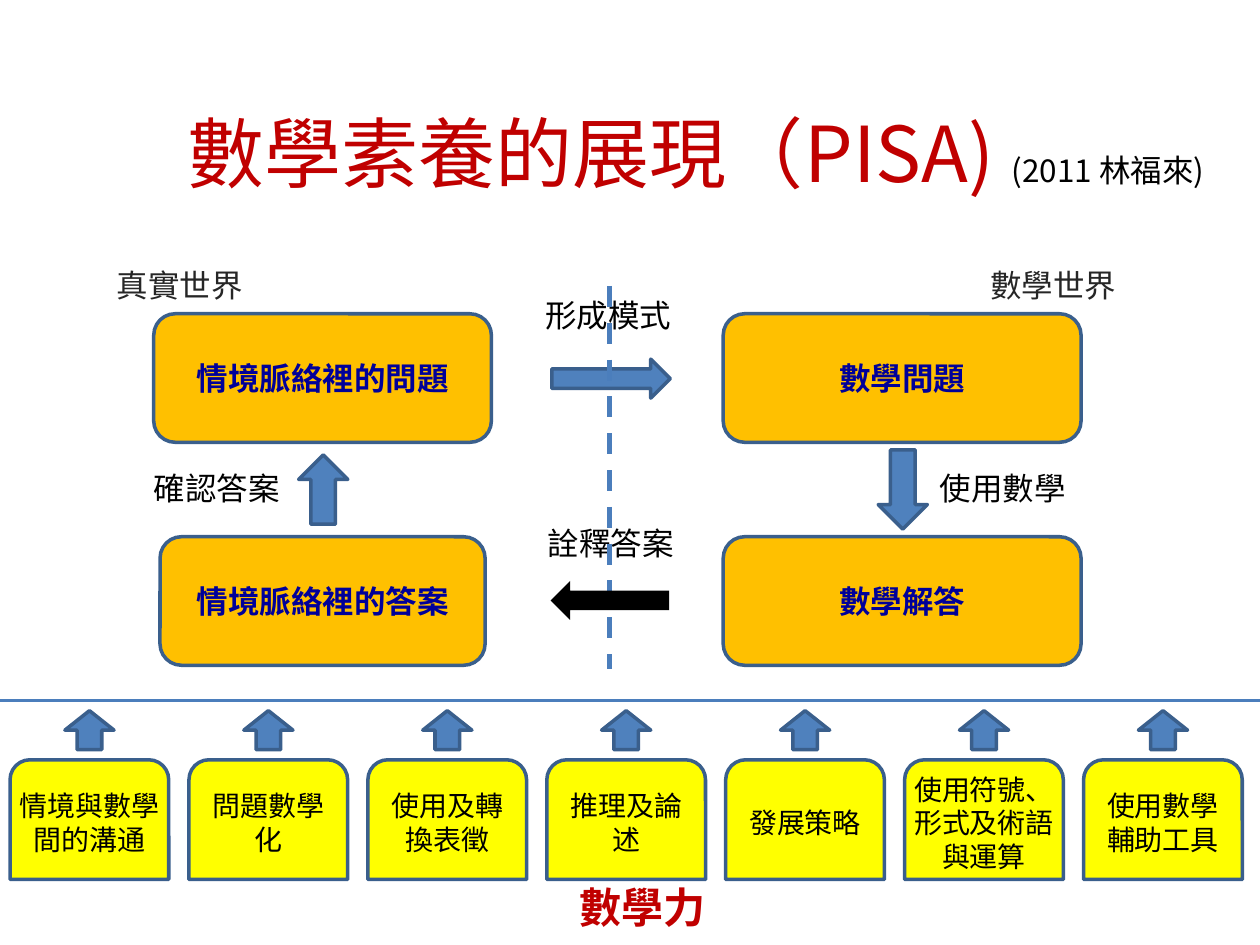
import pptx
import pptx.dml.color
import pptx.enum.dml
import pptx.enum.shapes
import pptx.enum.text
import pptx.oxml
import pptx.oxml.ns
import pptx.util
from dataclasses import dataclass

Inches = pptx.util.Inches
Pt = pptx.util.Pt
SHAPES = pptx.enum.shapes.MSO_SHAPE
ALIGN = pptx.enum.text.PP_ALIGN
ANCHOR = pptx.enum.text.MSO_ANCHOR


@dataclass(frozen=True)
class Theme:
    body_font: str = "Calibri"
    title_font: str = "Noto Sans CJK SC"
    title_size: int = 44
    force_size: int = 24
    body_size: int = 18
    ability_size: int = 16
    red: str = "C00000"
    black: str = "000000"
    gray: str = "262626"
    navy: str = "000099"
    orange: str = "FFC000"
    yellow: str = "FFFF00"
    blue: str = "4F81BD"
    outline: str = "3A5F8C"
    rule: str = "4B7EBC"


THEME = Theme()

TITLE = ("數學素養的展現（PISA) ", "(2011 林福來)")
FORCE = "數學力"
LABELS = [
    ("真實世界", 0.83, 2.06, 1.64, THEME.gray, ALIGN.LEFT),
    ("數學世界", 7.76, 2.06, 1.97, THEME.gray, ALIGN.LEFT),
    ("形成模式", 4.23, 2.3, 1.64, THEME.black, ALIGN.LEFT),
    ("使用數學", 7.36, 3.67, 1.64, THEME.black, ALIGN.LEFT),
    ("詮釋答案", 3.9, 4.11, 1.89, THEME.black, ALIGN.CENTER),
    ("確認答案", 1.12, 3.67, 1.99, THEME.black, ALIGN.LEFT),
]
STAGES = [
    ("情境脈絡裡的問題", 1.22, 2.49, 2.68),
    ("數學問題", 5.74, 2.49, 2.84),
    ("情境脈絡裡的答案", 1.27, 4.26, 2.58),
    ("數學解答", 5.74, 4.26, 2.84),
]
STAGE_HEIGHT = 1.02
STAGE_ARROWS = [
    (SHAPES.RIGHT_ARROW, (4.38, 2.85, 0.94, 0.31)),
    (SHAPES.DOWN_ARROW, (6.97, 3.57, 0.39, 0.63)),
    (SHAPES.UP_ARROW, (2.37, 3.61, 0.39, 0.55)),
]
ABILITIES = [
    ("情境與數學間的溝通", 0),
    ("問題數學化", 0.1),
    ("使用及轉換表徵", 0.1),
    ("推理及論述", 0.1),
    ("發展策略", 0.1),
    ("使用符號、形式及術語與運算", 0),
    ("使用數學輔助工具", 0.1),
]
ABILITY_LEFT, ABILITY_PITCH, ABILITY_WIDTH = 0.08, 1.42, 1.26
ABILITY_ARROW_WIDTH = 0.39


def color(value):
    return pptx.dml.color.RGBColor.from_string(value)


def format_run(run, size, text_color, bold=False, font=THEME.body_font):
    run.font.size = Pt(size)
    run.font.bold = bold
    run.font.color.rgb = color(text_color)
    run.font.name = font
    east_asian = pptx.oxml.parse_xml(
        f'<a:ea {pptx.oxml.ns.nsdecls("a")} typeface="{font}"/>'
    )
    run.font._element.find(pptx.oxml.ns.qn("a:latin")).addnext(east_asian)


def write(shape, text, size, text_color, bold=False, align=ALIGN.CENTER):
    shape.text_frame.word_wrap = True
    shape.text_frame.text = text
    paragraph = shape.text_frame.paragraphs[0]
    paragraph.alignment = align
    format_run(paragraph.runs[0], size, text_color, bold)


def add_label(slide, text, box, size, text_color, bold=False, align=ALIGN.CENTER):
    shape = slide.shapes.add_textbox(*map(Inches, box))
    write(shape, text, size, text_color, bold, align)


def add_block(slide, kind, box, fill, line=THEME.outline):
    shape = slide.shapes.add_shape(kind, *map(Inches, box))
    shape.shadow.inherit = False
    shape.fill.solid()
    shape.fill.fore_color.rgb = color(fill)
    shape.line.color.rgb = color(line)
    shape.line.width = Pt(2)
    shape.text_frame.vertical_anchor = ANCHOR.MIDDLE
    return shape


def add_rule(slide, points, width):
    connector = slide.shapes.add_connector(
        pptx.enum.shapes.MSO_CONNECTOR.STRAIGHT, *map(Inches, points)
    )
    connector.line.color.rgb = color(THEME.rule)
    connector.line.width = Pt(width)
    connector._element.spPr.append(
        pptx.oxml.parse_xml(f'<a:effectLst {pptx.oxml.ns.nsdecls("a")}/>')
    )
    return connector


def add_title(slide):
    shape = slide.shapes.add_textbox(*map(Inches, (0.93, 0, 9.19, 1.62)))
    frame = shape.text_frame
    frame.word_wrap = True
    frame.vertical_anchor = ANCHOR.BOTTOM
    frame.text = TITLE[0]
    paragraph = frame.paragraphs[0]
    paragraph.alignment = ALIGN.CENTER
    paragraph.add_run().text = TITLE[1]
    heading, credit = paragraph.runs
    format_run(heading, THEME.title_size, THEME.red, font=THEME.title_font)
    format_run(credit, THEME.body_size, THEME.black, font=THEME.title_font)


def add_abilities(slide):
    for index, (text, inset) in enumerate(ABILITIES):
        left = ABILITY_LEFT + index * ABILITY_PITCH
        block = add_block(
            slide, SHAPES.ROUND_2_SAME_RECTANGLE,
            (left, 6.03, ABILITY_WIDTH, 0.95), THEME.yellow,
        )
        block.text_frame.margin_left = block.text_frame.margin_right = Inches(inset)
        write(block, text, THEME.ability_size, THEME.black)
        arrow_left = left + (ABILITY_WIDTH - ABILITY_ARROW_WIDTH) / 2
        add_block(
            slide, SHAPES.UP_ARROW,
            (arrow_left, 5.64, ABILITY_ARROW_WIDTH, 0.31), THEME.blue,
        )


def main():
    presentation = pptx.Presentation()
    presentation.slide_width = Inches(10)
    presentation.slide_height = Inches(7.5)
    slide = presentation.slides.add_slide(presentation.slide_layouts[6])

    for text, left, top, width, text_color, align in LABELS:
        add_label(slide, text, (left, top, width, 0.51), THEME.body_size,
                  text_color, align=align)
    for text, left, top, width in STAGES:
        stage = add_block(slide, SHAPES.ROUNDED_RECTANGLE,
                          (left, top, width, STAGE_HEIGHT), THEME.orange)
        write(stage, text, THEME.body_size, THEME.navy, bold=True)
    for kind, box in STAGE_ARROWS:
        add_block(slide, kind, box, THEME.blue)
    add_abilities(slide)
    add_rule(slide, (0, 5.56, 10, 5.56), 2)
    add_label(slide, FORCE, (1.91, 6.95, 6.38, 0.51), THEME.force_size,
              THEME.red, bold=True)
    divider = add_rule(slide, (4.84, 2.27, 4.84, 5.31), 3)
    divider.line.dash_style = pptx.enum.dml.MSO_LINE.DASH
    add_title(slide)
    interpret_arrow = add_block(slide, SHAPES.RIGHT_ARROW,
                                (4.37, 4.61, 0.94, 0.31), THEME.black)
    interpret_arrow.line.fill.background()
    interpret_arrow.rotation = 180
    presentation.save("out.pptx")


if __name__ == "__main__":
    main()
